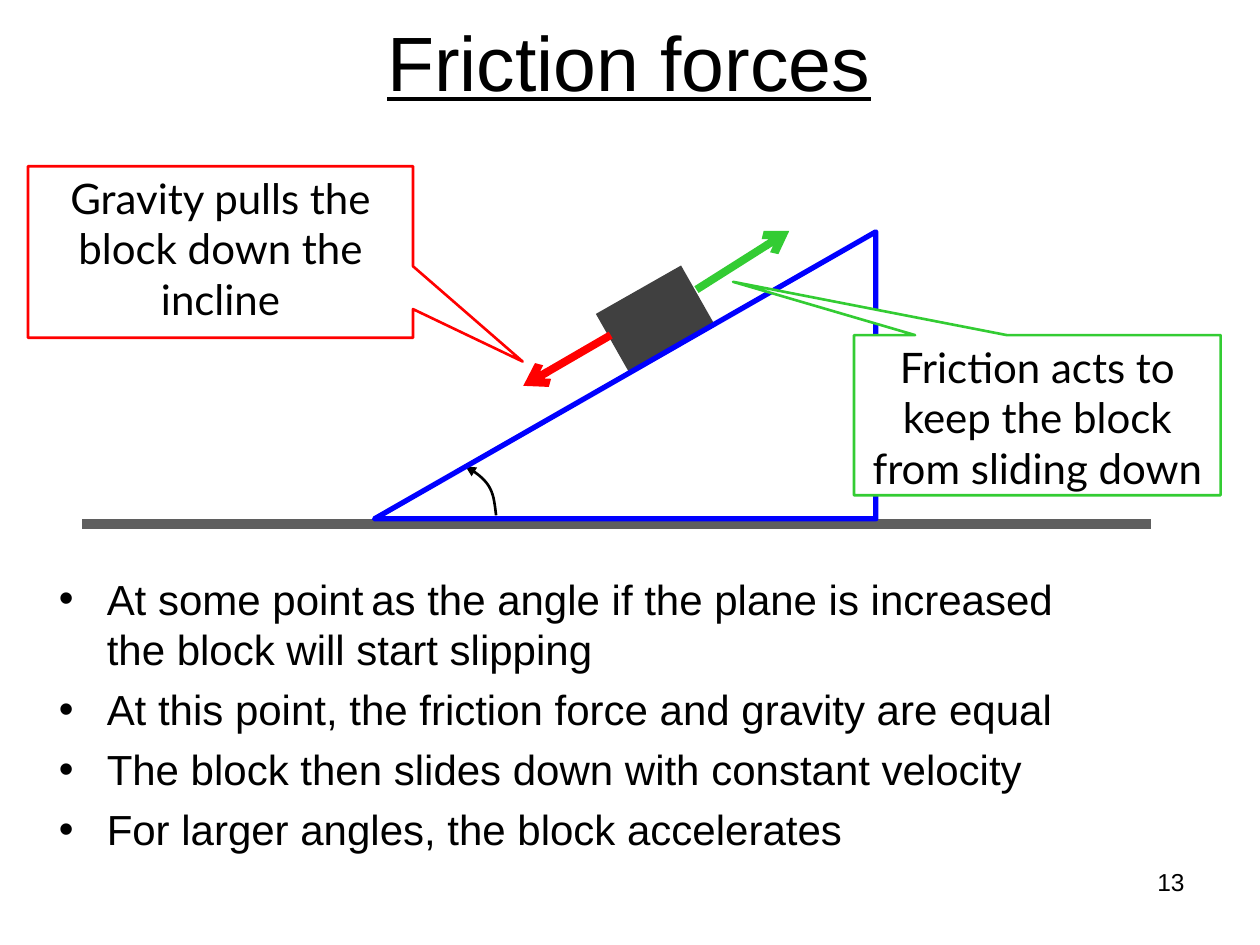
from lxml import etree
from pptx import Presentation
from pptx.dml.color import RGBColor
from pptx.enum import shapes, text
from pptx.oxml.ns import qn
from pptx.util import Pt

BLACK, WHITE, RED, GREEN, BLUE = "000000", "FFFFFF", "FF0000", "33CC33", "0000FF"
LEFT, CENTER, RIGHT = (text.PP_ALIGN.LEFT, text.PP_ALIGN.CENTER, text.PP_ALIGN.RIGHT)


def rgb(hex_color):
    return RGBColor.from_string(hex_color)


def style(sp, fill=None, line=None, width=1):
    sp.shadow.inherit = False
    if fill:
        sp.fill.solid()
        sp.fill.fore_color.rgb = rgb(fill)
    else:
        sp.fill.background()
    if line:
        sp.line.color.rgb = rgb(line)
        sp.line.width = Pt(width)
    else:
        sp.line.fill.background()


def add_text(p, words, size=24, font="Arial", color=BLACK, underline=None, align=LEFT):
    p.alignment = align
    r = p.add_run()
    r.text = words
    r.font.size, r.font.name, r.font.underline = Pt(size), font, underline
    r.font.color.rgb = rgb(color)


def add_bullet(p, indent=27.4):
    pPr = p._p.get_or_add_pPr()
    pPr.set("marL", str(Pt(indent)))
    pPr.set("indent", str(-Pt(indent)))
    etree.SubElement(pPr, qn("a:buFont")).set("typeface", "Arial")
    etree.SubElement(pPr, qn("a:buChar")).set("char", "•")


def add_arrowhead(sp, kind):
    etree.SubElement(sp.line._get_or_add_ln(), qn("a:tailEnd")).set("type", kind)


def text_box(s, box, anchor=text.MSO_ANCHOR.TOP):
    tf = s.shapes.add_textbox(*map(Pt, box)).text_frame
    tf.word_wrap = True
    tf.vertical_anchor = anchor
    return tf


def line(s, start, end, color, width, head=None):
    sp = s.shapes.add_connector(shapes.MSO_CONNECTOR.STRAIGHT, *map(Pt, start + end))
    sp.line.color.rgb = rgb(color)
    sp.line.width = Pt(width)
    if head:
        add_arrowhead(sp, head)
    etree.SubElement(sp._element.spPr, qn("a:effectLst"))


def title(s, box, words):
    tf = text_box(s, box, text.MSO_ANCHOR.MIDDLE)
    add_text(tf.paragraphs[0], words, size=44, underline=True, align=CENTER)


def bullets(s, box, items):
    tf = text_box(s, box)
    for i, runs in enumerate(items):
        p = tf.paragraphs[0] if i == 0 else tf.add_paragraph()
        p.space_before = Pt(5.5)
        for words, size in runs:
            add_text(p, words, size)
        add_bullet(p)


def page_number(s, box, number):
    add_text(text_box(s, box).paragraphs[0], number, size=14, align=RIGHT)


def angle_arc(s, *controls):
    """Draw a cubic curve through the four control points, with an arrowhead."""
    steps = 16
    curve = []
    for i in range(steps + 1):
        t = i / steps
        weights = ((1 - t) ** 3, 3 * t * (1 - t) ** 2, 3 * t * t * (1 - t), t ** 3)
        curve.append(tuple(Pt(sum(w * c[k] for w, c in zip(weights, controls)))
                           for k in (0, 1)))
    fb = s.shapes.build_freeform(*curve[0])
    fb.add_line_segments(curve[1:], close=False)
    sp = fb.convert_to_shape()
    style(sp, line=BLACK, width=1.5)
    add_arrowhead(sp, "triangle")


def incline(s, box):
    x, y, w, h = box
    # Ground
    line(s, (x - 167, y + h + 3), (x + w + 157.5, y + h + 3), "5F5F5F", 6)
    # Block on the slope
    block = s.shapes.add_shape(shapes.MSO_SHAPE.RECTANGLE,
                               Pt(x + 132.5), Pt(y + 30.5), Pt(56), Pt(39))
    block.rotation = 330.4
    style(block, fill="404040")
    # Angle of the slope
    angle_arc(s, (x + 69.5, y + h - 2), (x + 68, y + h - 14),
              (x + 68, y + h - 21), (x + 52, y + h - 30))
    # Plane, rising to the right
    plane = s.shapes.add_shape(shapes.MSO_SHAPE.RIGHT_TRIANGLE, *map(Pt, box))
    plane._element.spPr.find(qn("a:xfrm")).set("flipH", "1")
    style(plane, line=BLUE, width=3)


def callout(s, box, words, color, tip):
    sp = s.shapes.add_shape(shapes.MSO_SHAPE.RECTANGULAR_CALLOUT, *map(Pt, box))
    sp.adjustments[0], sp.adjustments[1] = tip
    style(sp, fill=WHITE, line=color, width=1.5)
    tf = sp.text_frame
    tf.word_wrap = True
    tf.vertical_anchor = text.MSO_ANCHOR.TOP
    add_text(tf.paragraphs[0], words, font="Lato", align=CENTER)


def main():
    prs = Presentation()
    prs.slide_width, prs.slide_height = Pt(720), Pt(540)
    s = prs.slides.add_slide(prs.slide_layouts[6])

    title(s, (35.5, 0, 648, 69), "Friction forces")
    bullets(s, (26.5, 324, 610, 188), [
        [("At some point", 24), (" ", 16),
         ("as the angle if the plane is increased the block will start slipping", 24)],
        [("At this point, the friction force and gravity are equal", 24)],
        [("The block then slides down with constant velocity", 24)],
        [("For larger angles, the block accelerates", 24)],
    ])
    page_number(s, (516, 492, 168, 37), "13")
    incline(s, (214, 132.5, 286.5, 164))
    callout(s, (16, 95, 220, 98), "Gravity pulls the block down the incline",
            RED, (0.785, 0.639))
    callout(s, (488, 191.5, 209.5, 91.5),
            "Friction acts to keep the block from sliding down", GREEN, (-0.83, -0.833))

    # Forces on the block
    line(s, (349, 191.5), (299, 220.5), RED, 4.5, "arrow")
    line(s, (398, 165.5), (451, 132), GREEN, 4.5, "arrow")

    prs.save("out.pptx")


if __name__ == "__main__":
    main()
